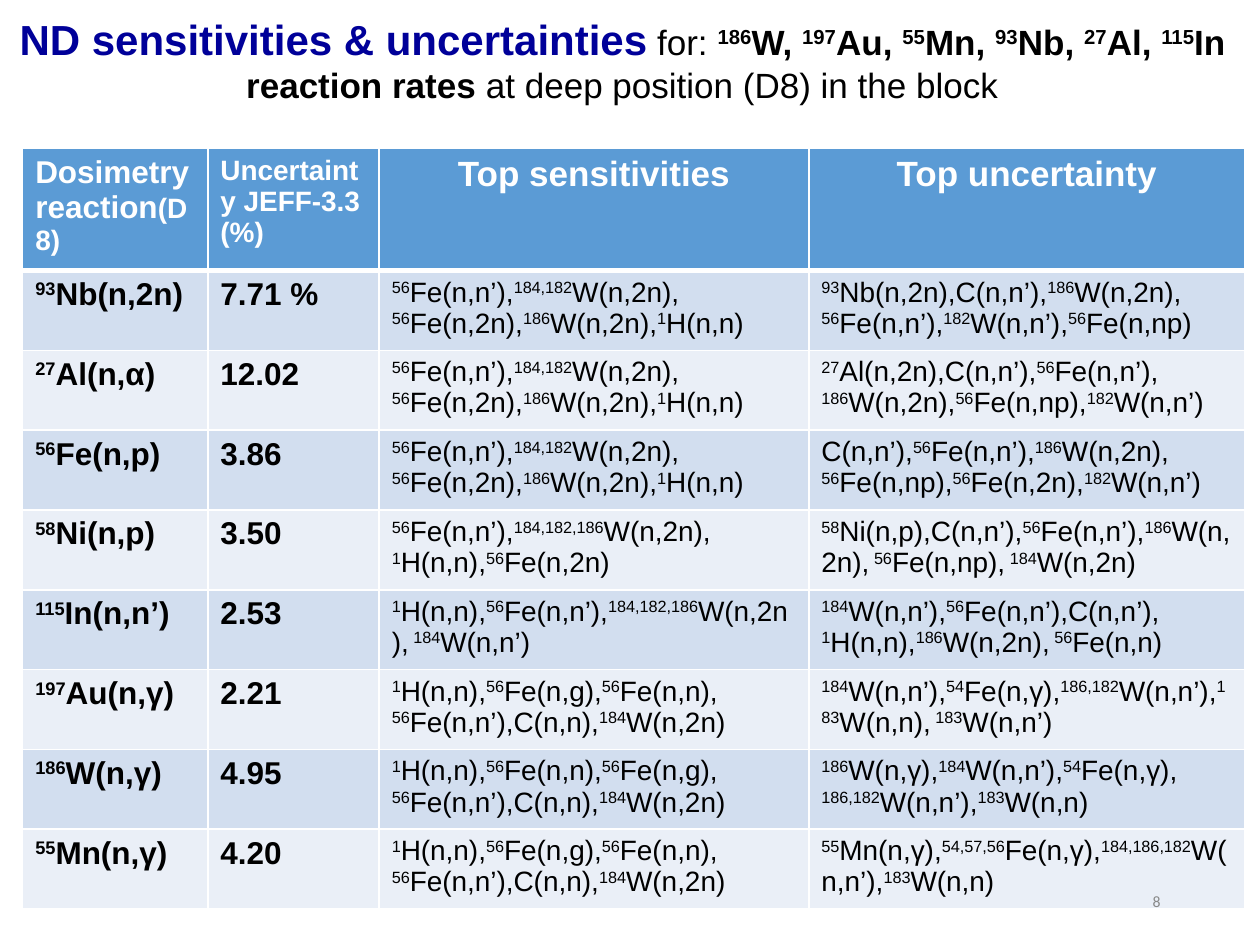
from typing import NamedTuple

from lxml.etree import fromstring
from pptx import Presentation
from pptx.dml.color import RGBColor as RGB
from pptx.enum.text import MSO_ANCHOR as Anchor, MSO_AUTO_SIZE as Fit, PP_ALIGN as Align
from pptx.util import Inches, Pt

NAVY = RGB(0x00, 0x00, 0x99)
BLACK = RGB(0x00, 0x00, 0x00)
WHITE = RGB(0xFF, 0xFF, 0xFF)
GREY = RGB(0x89, 0x89, 0x89)
BLUE = RGB(0x5B, 0x9B, 0xD5)
BANDS = (RGB(0xD2, 0xDE, 0xEF), RGB(0xEA, 0xEF, 0xF7))
NS = "http://schemas.openxmlformats.org/drawingml/2006/main"
WIDTHS = (1.47, 1.36, 3.41, 3.46)
HEIGHTS = (0.68, 0.45, 0.45, 0.61, 0.61, 0.61, 0.43, 0.43, 0.43)


class Rate(NamedTuple):
    name: str
    value: str
    sens: str
    unc: str


IRON = "^56^Fe(n,n’),^184,182^W(n,2n), ^56^Fe(n,2n),^186^W(n,2n),^1^H(n,n)"
GAMMA = "^1^H(n,n),^56^Fe(n,g),^56^Fe(n,n), ^56^Fe(n,n’),C(n,n),^184^W(n,2n)"

RATES = (
    Rate("^93^Nb(n,2n)", "7.71 %", IRON,
         "^93^Nb(n,2n),C(n,n’),^186^W(n,2n), ^56^Fe(n,n’),^182^W(n,n’),^56^Fe(n,np)"),
    Rate("^27^Al(n,α)", "12.02", IRON,
         "^27^Al(n,2n),C(n,n’),^56^Fe(n,n’), ^186^W(n,2n),^56^Fe(n,np),^182^W(n,n’)"),
    Rate("^56^Fe(n,p)", "3.86", IRON,
         "C(n,n’),^56^Fe(n,n’),^186^W(n,2n), ^56^Fe(n,np),^56^Fe(n,2n),^182^W(n,n’)"),
    Rate("^58^Ni(n,p)", "3.50",
         "^56^Fe(n,n’),^184,182,186^W(n,2n), ^1^H(n,n),^56^Fe(n,2n)",
         "^58^Ni(n,p),C(n,n’),^56^Fe(n,n’),^186^W(n,2n),^ 56^Fe(n,np),^ 184^W(n,2n)"),
    Rate("^115^In(n,n’)", "2.53",
         "^1^H(n,n),^56^Fe(n,n’),^184,182,186^W(n,2n),^ 184^W(n,n’)",
         "^184^W(n,n’),^56^Fe(n,n’),C(n,n’), ^1^H(n,n),^186^W(n,2n),^ 56^Fe(n,n)"),
    Rate("^197^Au(n,γ)", "2.21", GAMMA,
         "^184^W(n,n’),^54^Fe(n,γ),^186,182^W(n,n’),^183^W(n,n),^ 183^W(n,n’)"),
    Rate("^186^W(n,γ)", "4.95",
         "^1^H(n,n),^56^Fe(n,n),^56^Fe(n,g), ^56^Fe(n,n’),C(n,n),^184^W(n,2n)",
         "^186^W(n,γ),^184^W(n,n’),^54^Fe(n,γ),^ 186,182^W(n,n’),^183^W(n,n)"),
    Rate("^55^Mn(n,γ)", "4.20", GAMMA,
         "^55^Mn(n,γ),^54,57,56^Fe(n,γ),^184,186,182^W(n,n’),^183^W(n,n)"),
)


def write(frame, text: str, *, size: int, color: RGB = BLACK, bold: bool = False,
          font: str = "Arial", align: Align = Align.LEFT) -> None:
    para = frame.paragraphs[0]
    para.alignment = align
    for index, part in enumerate(text.split("^")):
        if not part:
            continue
        run = para.add_run()
        run.text = part
        run.font.size = Pt(size)
        run.font.name = font
        run.font.bold = bold
        run.font.color.rgb = color
        if index % 2:
            run._r.get_or_add_rPr().set("baseline", "30000")


def paint(cell, fill: RGB, top: int = 1, base: int = 1) -> None:
    cell.fill.solid()
    cell.fill.fore_color.rgb = fill
    props = cell._tc.get_or_add_tcPr()
    for index, (side, width) in enumerate(zip("LRTB", (1, 1, top, base))):
        props.insert(index, fromstring(
            f'<a:ln{side} xmlns:a="{NS}" w="{Pt(width)}"><a:solidFill>'
            f'<a:srgbClr val="{WHITE}"/></a:solidFill></a:ln{side}>'))


def add_box(slide, left: float, top: float, width: float, height: float):
    box = slide.shapes.add_textbox(Inches(left), Inches(top), Inches(width), Inches(height))
    frame = box.text_frame
    frame.word_wrap = True
    frame.vertical_anchor = Anchor.MIDDLE
    return frame


def add_title(slide) -> None:
    frame = add_box(slide, 0, 0.05, 9.88, 0.84)
    frame.auto_size = Fit.SHAPE_TO_FIT_TEXT
    mid = Align.CENTER
    write(frame, "ND sensitivities & uncertainties", size=24, color=NAVY, bold=True, align=mid)
    write(frame, " for: ", size=20, align=mid)
    write(frame, "^186^W, ^197^Au, ^55^Mn, ^93^Nb, ^27^Al, ^115^In reaction rates",
          size=20, bold=True, align=mid)
    write(frame, " at deep position (D8) in the block", size=20, align=mid)


def add_rates(slide) -> None:
    shape = slide.shapes.add_table(len(RATES) + 1, len(WIDTHS), Inches(0.18), Inches(1.18),
                                   Inches(9.7), Inches(5.77))
    table = shape.table
    for col, width in zip(table.columns, WIDTHS):
        col.width = Inches(width)
    for row, height in zip(table.rows, HEIGHTS):
        row.height = Inches(height)
    shape.height = Inches(5.77)

    heads = [cell.text_frame for cell in table.rows[0].cells]
    for cell in table.rows[0].cells:
        paint(cell, BLUE, base=3)
    write(heads[0], "Dosimetry reaction", size=18, color=WHITE, bold=True)
    write(heads[0], "(D8)", size=16, color=WHITE, bold=True)
    write(heads[1], "Uncertainty JEFF-3.3 (%)", size=16, color=WHITE, bold=True)
    for frame, text in zip(heads[2:], ("Top sensitivities", "Top uncertainty")):
        write(frame, text, size=20, color=WHITE, bold=True, align=Align.CENTER)

    for index, rate in enumerate(RATES):
        for col, text in enumerate(rate):
            cell = table.cell(index + 1, col)
            paint(cell, BANDS[index % 2], top=1 if index else 3)
            write(cell.text_frame, text, size=18 if col < 2 else 16, bold=col < 2)


def main() -> None:
    deck = Presentation()
    deck.slide_width, deck.slide_height = Inches(10), Inches(7.5)
    slide = deck.slides.add_slide(deck.slide_layouts[6])
    add_title(slide)
    add_rates(slide)
    write(add_box(slide, 7.06, 6.95, 2.25, 0.4), "8", size=9, color=GREY,
          font="Calibri", align=Align.RIGHT)
    deck.save("out.pptx")


if __name__ == "__main__":
    main()
